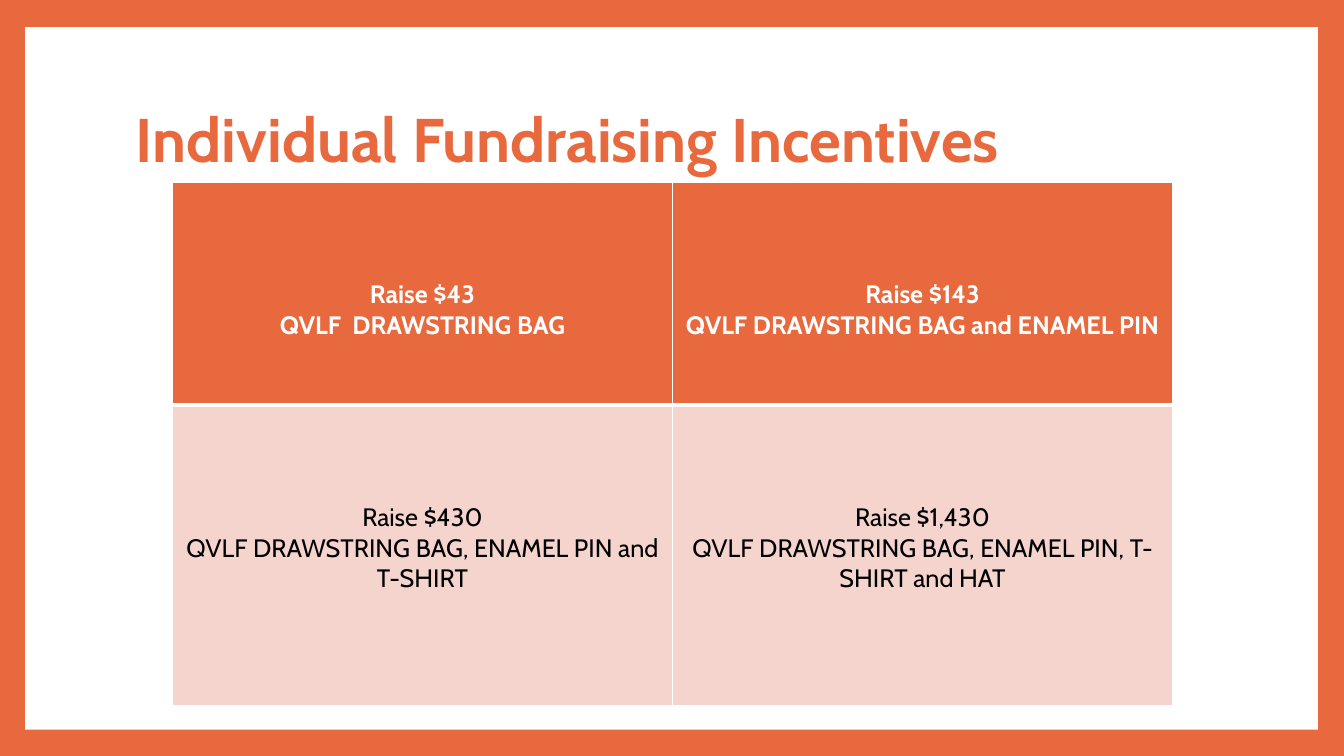
from lxml.etree import SubElement
from pptx import Presentation
from pptx.dml.color import RGBColor
from pptx.enum.shapes import MSO_SHAPE
from pptx.enum.text import MSO_ANCHOR, PP_ALIGN
from pptx.oxml.ns import qn
from pptx.util import Inches, Pt

ORANGE = RGBColor(0xE7, 0x69, 0x3D)
PINK = RGBColor(0xF6, 0xD4, 0xCE)
WHITE = RGBColor(0xFF, 0xFF, 0xFF)
BLACK = RGBColor(0x00, 0x00, 0x00)
FONT = "Cabin"

TITLE = "Individual Fundraising Incentives"
INCENTIVES = [
    [("Raise $43", "QVLF  DRAWSTRING BAG"),
     ("Raise $143", "QVLF DRAWSTRING BAG and ENAMEL PIN")],
    [("Raise $430", "QVLF DRAWSTRING BAG, ENAMEL PIN and T-SHIRT"),
     ("Raise $1,430", "QVLF DRAWSTRING BAG, ENAMEL PIN, T-SHIRT and HAT")],
]
# Fill, text colour, bold and bottom border width of each row
ROW_STYLES = [(ORANGE, WHITE, True, 3), (PINK, BLACK, False, 1)]
ROW_HEIGHTS = [2.21, 2.98]
COLUMN_WIDTH = 4.96
TABLE_LEFT, TABLE_TOP = 1.71, 1.81
TEXT_DROP = 0.96


def style_font(font, size, color, bold):
    font.name = FONT
    font.size = Pt(size)
    font.color.rgb = color
    font.bold = bold


def add_borders(cell, widths):
    """Draw white cell borders; widths maps an edge letter to points."""
    properties = cell._tc.get_or_add_tcPr()
    for position, (edge, width) in enumerate(widths.items()):
        line = SubElement(properties, qn(f"a:ln{edge}"), w=str(Pt(width)))
        fill = SubElement(line, qn("a:solidFill"))
        SubElement(fill, qn("a:srgbClr"), val=str(WHITE))
        properties.insert(position, line)


def add_panel(page):
    panel = page.shapes.add_shape(
        MSO_SHAPE.RECTANGLE, Inches(0.25), Inches(0.27), Inches(12.82), Inches(6.97))
    panel.shadow.inherit = False
    panel.fill.solid()
    panel.fill.fore_color.rgb = WHITE
    panel.line.fill.background()


def add_title(page):
    box = page.shapes.add_textbox(
        Inches(1.25), Inches(0.67), Inches(11.81), Inches(1.48))
    frame = box.text_frame
    frame.word_wrap = True
    frame.vertical_anchor = MSO_ANCHOR.MIDDLE
    frame.text = TITLE
    paragraph = frame.paragraphs[0]
    paragraph.line_spacing = 0.9
    style_font(paragraph.runs[0].font, 44, ORANGE, True)


def fill_cell(cell, lines, style):
    fill_color, text_color, bold, bottom = style
    cell.fill.solid()
    cell.fill.fore_color.rgb = fill_color
    cell.margin_top = Inches(TEXT_DROP)
    cell.text_frame.text = "\n".join(lines)
    for paragraph in cell.text_frame.paragraphs:
        paragraph.alignment = PP_ALIGN.CENTER
        style_font(paragraph.runs[0].font, 18, text_color, bold)
    top = 3 if bottom == 1 else 1
    add_borders(cell, {"L": 1, "R": 1, "T": top, "B": bottom})


def add_incentives(page):
    columns = len(INCENTIVES[0])
    table = page.shapes.add_table(
        len(INCENTIVES), columns, Inches(TABLE_LEFT), Inches(TABLE_TOP),
        Inches(COLUMN_WIDTH * columns), Inches(sum(ROW_HEIGHTS))).table
    for row, height in zip(table.rows, ROW_HEIGHTS):
        row.height = Inches(height)
    for r, (row, style) in enumerate(zip(INCENTIVES, ROW_STYLES)):
        for c, lines in enumerate(row):
            fill_cell(table.cell(r, c), lines, style)


def main():
    deck = Presentation()
    deck.slide_width, deck.slide_height = Inches(13.33), Inches(7.5)
    page = deck.slides.add_slide(deck.slide_layouts[6])
    page.background.fill.solid()
    page.background.fill.fore_color.rgb = ORANGE
    add_panel(page)
    add_title(page)
    add_incentives(page)
    deck.save("out.pptx")


if __name__ == "__main__":
    main()
